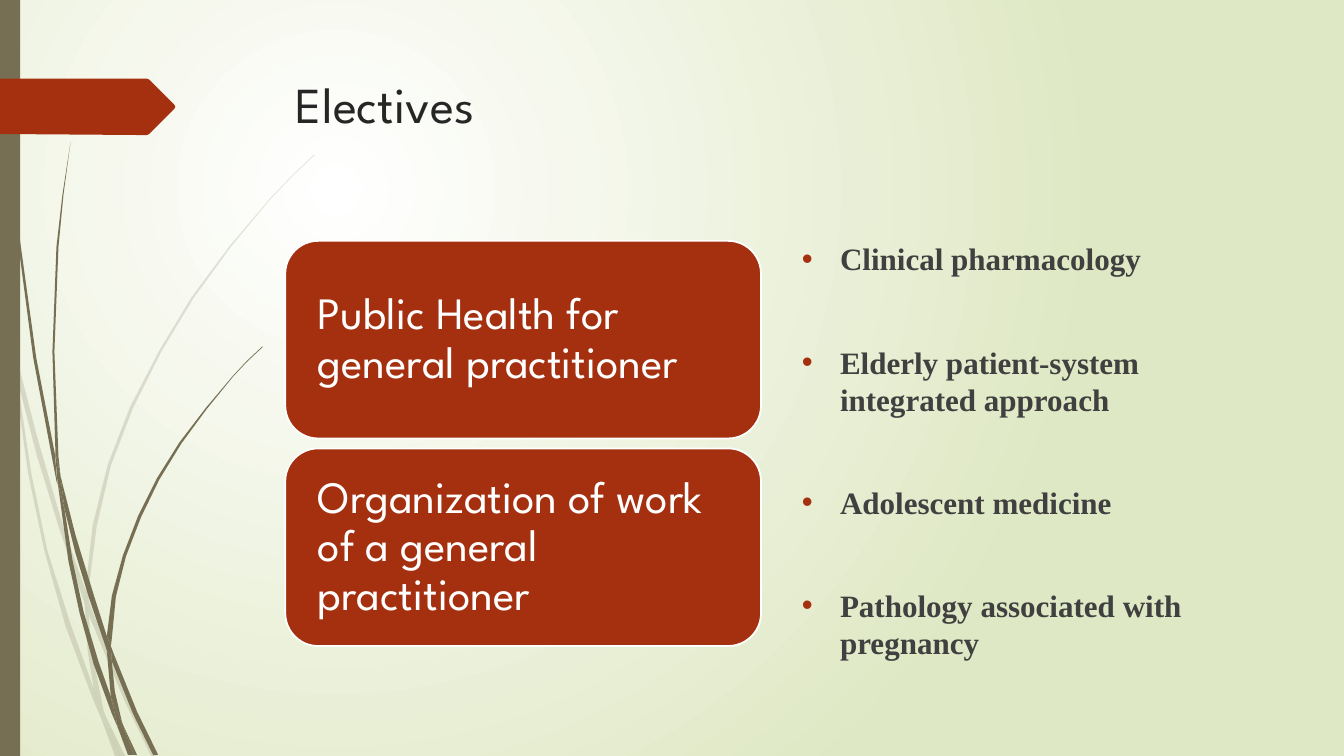
import pptx
import pptx.util
import pptx.dml.color
import pptx.enum.shapes
import pptx.enum.text
import pptx.oxml.ns
from lxml import etree

Cm, Pt, qn = pptx.util.Cm, pptx.util.Pt, pptx.oxml.ns.qn
SANS, SERIF = "League Spartan", "Times New Roman"
RUST, OLIVE, WHITE = "A53010", "766F54", "FFFFFF"
UNIT = Cm(2.54) / 100  # outline points are in hundredths of an inch


def paint(fill, color):
    """Make the fill solid in a hex colour."""
    fill.solid()
    fill.fore_color.rgb = pptx.dml.color.RGBColor.from_string(color)


def style(par, face, size, color, bold=False):
    """Format every run of a paragraph."""
    for run in par.runs:
        run.font.name, run.font.size, run.font.bold = face, Pt(size), bold
        paint(run.font.fill, color)


deck = pptx.Presentation()
deck.slide_width, deck.slide_height = Cm(33.87), Cm(19.05)
slide = deck.slides.add_slide(deck.slide_layouts[6])
shapes = slide.shapes

# Background: round glow around the upper left
glow = slide.background.fill
glow.gradient()
for stop, color in zip(glow.gradient_stops, (WHITE, "DFE8C4")):
    stop.color.rgb = pptx.dml.color.RGBColor.from_string(color)
grad = next(slide.element.iter(qn("a:gradFill")))
grad.remove(grad.find(qn("a:lin")))
ring = etree.SubElement(grad, qn("a:path"), path="circle")
etree.SubElement(ring, qn("a:fillToRect"), l="50000", t="50000", r="100000", b="100000")

# Grass: pale blades behind, dark blades in front
pale = [
    [(11, 350), (9, 322), (0, 282), (0, 299), (10, 344)],
    [(58, 522), (84, 599), (85, 586), (62, 520), (37, 434), (14, 345), (17, 376), (36, 450)],
    [(92, 607), (88, 596), (88, 610), (123, 694), (150, 750), (155, 750), (127, 692)],
    [(119, 750), (124, 750), (105, 711)],
    [(93, 683), (70, 619), (47, 546), (31, 469), (17, 376), (11, 350), (28, 470),
     (44, 546), (65, 621), (92, 693), (101, 714), (99, 707)],
    [(84, 599), (87, 646), (93, 683), (96, 692), (105, 711), (103, 706), (91, 646),
     (88, 610), (88, 608)],
    [(88, 584), (96, 522), (110, 462), (132, 405), (160, 349), (192, 296), (229, 245),
     (268, 198), (290, 175), (312, 154), (312, 153), (289, 175), (268, 197), (228, 244),
     (190, 295), (158, 348), (129, 404), (107, 461), (92, 521), (85, 584), (85, 586),
     (88, 596)],
    [(101, 714), (114, 750), (119, 750)],
    [(88, 608), (88, 610), (88, 596), (85, 586), (84, 599)],
    [(96, 692), (93, 683), (99, 707), (101, 714), (119, 750), (105, 711)],
]
dark = [
    [(7, 110), (17, 233), (33, 355), (56, 477), (57, 481), (55, 457), (55, 453),
     (36, 355), (19, 232), (8, 109), (5, 48), (4, 0), (3, 0), (4, 48)],
    [(88, 592), (106, 645), (106, 631), (93, 590), (75, 531), (60, 472), (64, 505),
     (75, 549)],
    [(113, 649), (110, 641), (111, 656), (132, 708), (152, 749), (157, 749), (136, 706)],
    [(110, 691), (98, 657), (83, 607), (72, 556), (64, 505), (57, 477), (68, 557),
     (79, 608), (93, 659), (111, 708), (117, 722), (116, 717)],
    [(60, 472), (58, 453), (54, 349), (58, 245), (63, 193), (70, 141), (62, 193),
     (56, 245), (52, 349), (55, 449)],
    [(133, 749), (136, 749), (122, 719)],
    [(57, 477), (64, 505), (60, 472), (55, 449), (55, 453)],
    [(111, 633), (115, 592), (125, 552), (140, 513), (158, 476), (180, 440), (205, 406),
     (231, 374), (245, 359), (261, 344), (260, 344), (245, 358), (231, 373), (204, 405),
     (178, 439), (156, 474), (137, 512), (122, 551), (111, 591), (106, 631), (110, 641)],
    [(117, 722), (127, 749), (131, 749)],
    [(106, 645), (110, 691), (116, 706), (122, 719), (121, 716), (114, 686), (111, 656),
     (109, 651)],
    [(106, 645), (109, 651), (111, 656), (110, 641), (106, 631)],
    [(116, 706), (110, 691), (116, 717), (117, 722), (130, 749), (133, 749), (122, 719)],
]
for blades, alpha in ((pale, 20), (dark, 100)):
    tuft = shapes.add_group_shape()
    for blade in blades:
        pen = tuft.shapes.build_freeform(*blade[0], scale=UNIT)
        pen.add_line_segments(blade[1:])
        leaf = pen.convert_to_shape()
        leaf.shadow.inherit = False
        paint(leaf.fill, OLIVE)
        leaf.line.fill.background()
        if alpha < 100:
            tone = next(leaf.element.spPr.iter(qn("a:srgbClr")))
            etree.SubElement(tone, qn("a:alpha"), val=str(alpha * 1000))

# Side strip and arrow tab
kind = pptx.enum.shapes.MSO_SHAPE
strip = shapes.add_shape(kind.RECTANGLE, 0, 0, Cm(0.51), deck.slide_height)
pen = shapes.build_freeform(0, 78, scale=UNIT)
pen.add_line_segments([(146, 78), (148, 79), (173, 104), (174, 106), (173, 108),
                       (148, 133), (146, 134), (136, 134), (0, 133)])
tab = pen.convert_to_shape()
for part, color in ((strip, OLIVE), (tab, RUST)):
    part.shadow.inherit = False
    paint(part.fill, color)
    part.line.fill.background()

# Title
title = shapes.add_textbox(Cm(7.21), Cm(1.73), Cm(24.77), Cm(3.56)).text_frame
title.word_wrap = True
title.text = "Electives"
style(title.paragraphs[0], SANS, 36, "262626")

# Cards
cards = ["Public Health for general practitioner",
         "Organization of work of a general practitioner"]
for row, text in enumerate(cards):
    card = shapes.add_shape(kind.ROUNDED_RECTANGLE, Cm(7.19), Cm(6.07 + 5.23 * row),
                            Cm(11.99), Cm(4.98))
    card.shadow.inherit = False
    paint(card.fill, RUST)
    paint(card.line.fill, WHITE)
    card.line.width = Pt(1.25)
    frame = card.text_frame
    frame.word_wrap = True
    frame.vertical_anchor = pptx.enum.text.MSO_ANCHOR.MIDDLE
    frame.margin_left = frame.margin_right = Cm(0.58)
    frame.text = text
    par = frame.paragraphs[0]
    par.alignment = pptx.enum.text.PP_ALIGN.LEFT
    par.line_spacing = 0.9
    style(par, SANS, 32, WHITE)

# Bullet list
topics = ["Clinical pharmacology", "Elderly patient-system integrated approach",
          "Adolescent medicine", "Pathology associated with pregnancy"]
body = shapes.add_textbox(Cm(19.96), Cm(5.92), Cm(11.99), Cm(10.49)).text_frame
body.word_wrap = True
body.text = "\n".join(topics)
for row, par in enumerate(body.paragraphs):
    par.space_before = Pt(47 if row else 0)
    style(par, SERIF, 22.2, "404040", True)
    props = par._p.get_or_add_pPr()
    props.set("marL", str(Cm(0.96)))
    props.set("indent", str(-Cm(0.96)))
    tint = etree.SubElement(props, qn("a:buClr"))
    etree.SubElement(tint, qn("a:srgbClr"), val=RUST)
    etree.SubElement(props, qn("a:buFont"), typeface="Arial")
    etree.SubElement(props, qn("a:buChar"), char="•")

deck.save("out.pptx")
